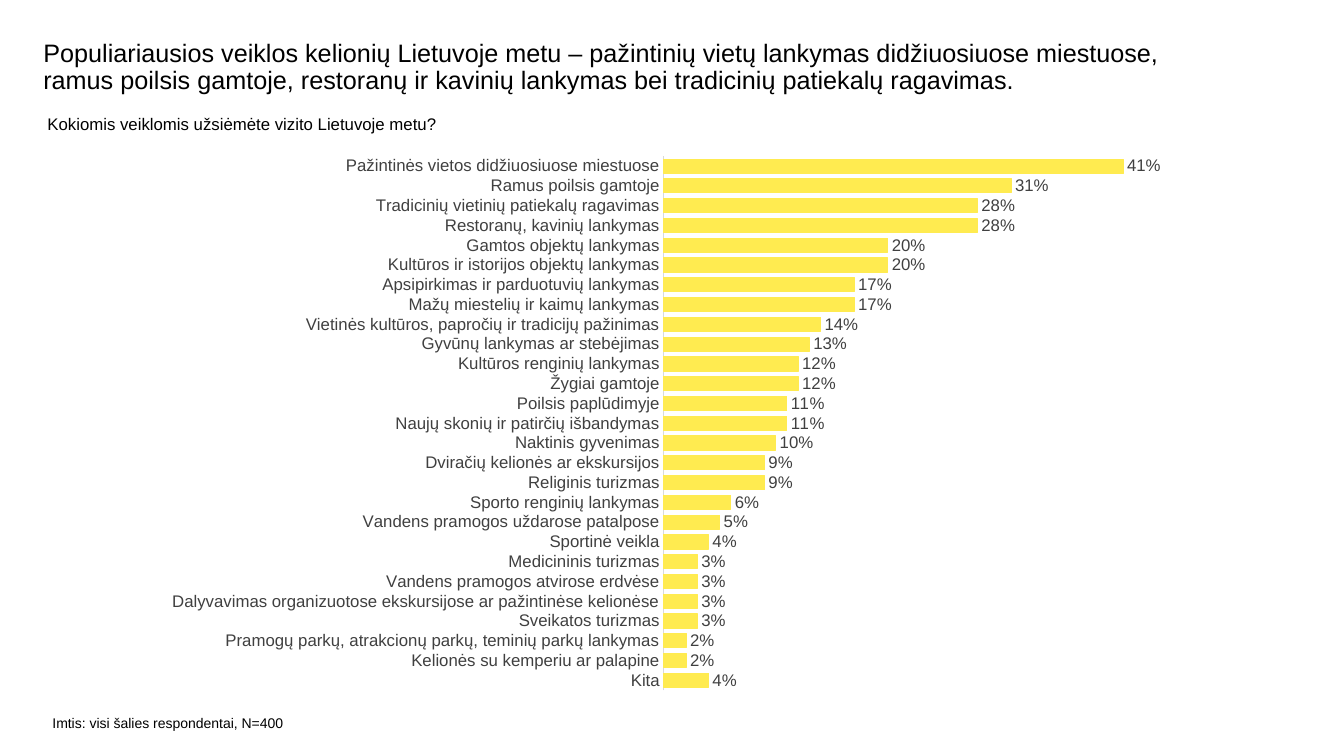
import pptx
import pptx.util
import pptx.dml.color
import pptx.chart.data
import pptx.enum.chart
import pptx.enum.text
import pptx.oxml
import pptx.oxml.ns

Inches, Pt = pptx.util.Inches, pptx.util.Pt
RGBColor = pptx.dml.color.RGBColor

HEADLINE = (
    "Populiariausios veiklos kelionių Lietuvoje metu – pažintinių vietų lankymas "
    "didžiuosiuose miestuose, ramus poilsis gamtoje, restoranų ir kavinių lankymas "
    "bei tradicinių patiekalų ragavimas."
)
QUESTION = "Kokiomis veiklomis užsiėmėte vizito Lietuvoje metu?"
SAMPLE = "Imtis: visi šalies respondentai, N=400"
ACTIVITIES = [
    ("Pažintinės vietos didžiuosiuose miestuose", 0.41),
    ("Ramus poilsis gamtoje", 0.31),
    ("Tradicinių vietinių patiekalų ragavimas", 0.28),
    ("Restoranų, kavinių lankymas", 0.28),
    ("Gamtos objektų lankymas", 0.20),
    ("Kultūros ir istorijos objektų lankymas", 0.20),
    ("Apsipirkimas ir parduotuvių lankymas", 0.17),
    ("Mažų miestelių ir kaimų lankymas", 0.17),
    ("Vietinės kultūros, papročių ir tradicijų pažinimas", 0.14),
    ("Gyvūnų lankymas ar stebėjimas", 0.13),
    ("Kultūros renginių lankymas", 0.12),
    ("Žygiai gamtoje", 0.12),
    ("Poilsis paplūdimyje", 0.11),
    ("Naujų skonių ir patirčių išbandymas", 0.11),
    ("Naktinis gyvenimas", 0.10),
    ("Dviračių kelionės ar ekskursijos", 0.09),
    ("Religinis turizmas", 0.09),
    ("Sporto renginių lankymas", 0.06),
    ("Vandens pramogos uždarose patalpose", 0.05),
    ("Sportinė veikla", 0.04),
    ("Medicininis turizmas", 0.03),
    ("Vandens pramogos atvirose erdvėse", 0.03),
    ("Dalyvavimas organizuotose ekskursijose ar pažintinėse kelionėse", 0.03),
    ("Sveikatos turizmas", 0.03),
    ("Pramogų parkų, atrakcionų parkų, teminių parkų lankymas", 0.02),
    ("Kelionės su kemperiu ar palapine", 0.02),
    ("Kita", 0.04),
]
PLOT_AREA = {"x": 0.494, "y": 0.02, "w": 0.486, "h": 0.96}

FONT = "Arial"
BLACK = RGBColor(0x00, 0x00, 0x00)
GRAY = RGBColor(0x40, 0x40, 0x40)
AXIS_GRAY = RGBColor(0xD9, 0xD9, 0xD9)
YELLOW = RGBColor(0xFF, 0xEB, 0x50)


def style_font(font, size, color):
    font.name = FONT
    font.size = Pt(size)
    font.bold = False
    font.color.rgb = color


def write_text(holder, text, size):
    frame = holder.text_frame
    frame.margin_left = frame.margin_right = frame.margin_top = frame.margin_bottom = 0
    frame.word_wrap = True
    frame.auto_size = pptx.enum.text.MSO_AUTO_SIZE.NONE
    frame.vertical_anchor = pptx.enum.text.MSO_ANCHOR.TOP
    paragraph = frame.paragraphs[0]
    paragraph.text = text
    paragraph.alignment = pptx.enum.text.PP_ALIGN.LEFT
    style_font(paragraph.font, size, BLACK)
    return paragraph


def add_activity_chart(slide):
    data = pptx.chart.data.CategoryChartData(number_format="0%")
    names, shares = zip(*reversed(ACTIVITIES))
    data.categories = names
    data.add_series("Series 1", shares)
    chart = slide.shapes.add_chart(
        pptx.enum.chart.XL_CHART_TYPE.BAR_CLUSTERED,
        Inches(1.5), Inches(1.44), Inches(10.29), Inches(5.52), data,
    ).chart
    chart.has_legend = False
    chart.has_title = False
    style_font(chart.font, 10, BLACK)

    activity_axis = chart.category_axis
    activity_axis.major_tick_mark = pptx.enum.chart.XL_TICK_MARK.NONE
    activity_axis.format.line.color.rgb = AXIS_GRAY
    activity_axis.format.line.width = Pt(0.75)
    style_font(activity_axis.tick_labels.font, 12, GRAY)

    share_axis = chart.value_axis
    share_axis.visible = False
    share_axis.has_major_gridlines = False
    share_axis.minimum_scale = 0
    share_axis.maximum_scale = 0.45

    plot = chart.plots[0]
    plot.gap_width = 40
    plot.vary_by_categories = False
    bars = plot.series[0]
    bars.format.fill.solid()
    bars.format.fill.fore_color.rgb = YELLOW
    bars.format.line.color.rgb = YELLOW
    bars.format.line.width = Pt(0.75)

    labels = bars.data_labels
    labels.show_value = True
    labels.number_format = "0%"
    labels.number_format_is_linked = False
    labels.position = pptx.enum.chart.XL_LABEL_POSITION.OUTSIDE_END
    style_font(labels.font, 12, GRAY)

    modes = "".join(f'<c:{side}Mode val="edge"/>' for side in "xy")
    sizes = "".join(f'<c:{side} val="{part}"/>' for side, part in PLOT_AREA.items())
    layout = pptx.oxml.parse_xml(
        f'<c:layout {pptx.oxml.ns.nsdecls("c")}><c:manualLayout>'
        f'<c:layoutTarget val="inner"/>{modes}{sizes}</c:manualLayout></c:layout>'
    )
    plot_area = chart.element.chart.plotArea
    for automatic in plot_area.findall(pptx.oxml.ns.qn("c:layout")):
        plot_area.remove(automatic)
    plot_area.insert(0, layout)


def main():
    deck = pptx.Presentation()
    deck.slide_width, deck.slide_height = Inches(13.33), Inches(7.5)
    slide = deck.slides.add_slide(deck.slide_layouts[5])

    headline = slide.shapes.title
    headline.left, headline.top = Inches(0.43), Inches(0.4)
    headline.width, headline.height = Inches(11.25), Inches(0.6)
    write_text(headline, HEADLINE, 18).line_spacing = 0.9

    question = slide.shapes.add_textbox(Inches(0.47), Inches(1.13), Inches(11.89), Inches(0.61))
    write_text(question, QUESTION, 12)
    sample = slide.shapes.add_textbox(Inches(0.52), Inches(7.09), Inches(2.53), Inches(0.24))
    write_text(sample, SAMPLE, 10)

    add_activity_chart(slide)
    deck.save("out.pptx")


if __name__ == "__main__":
    main()
